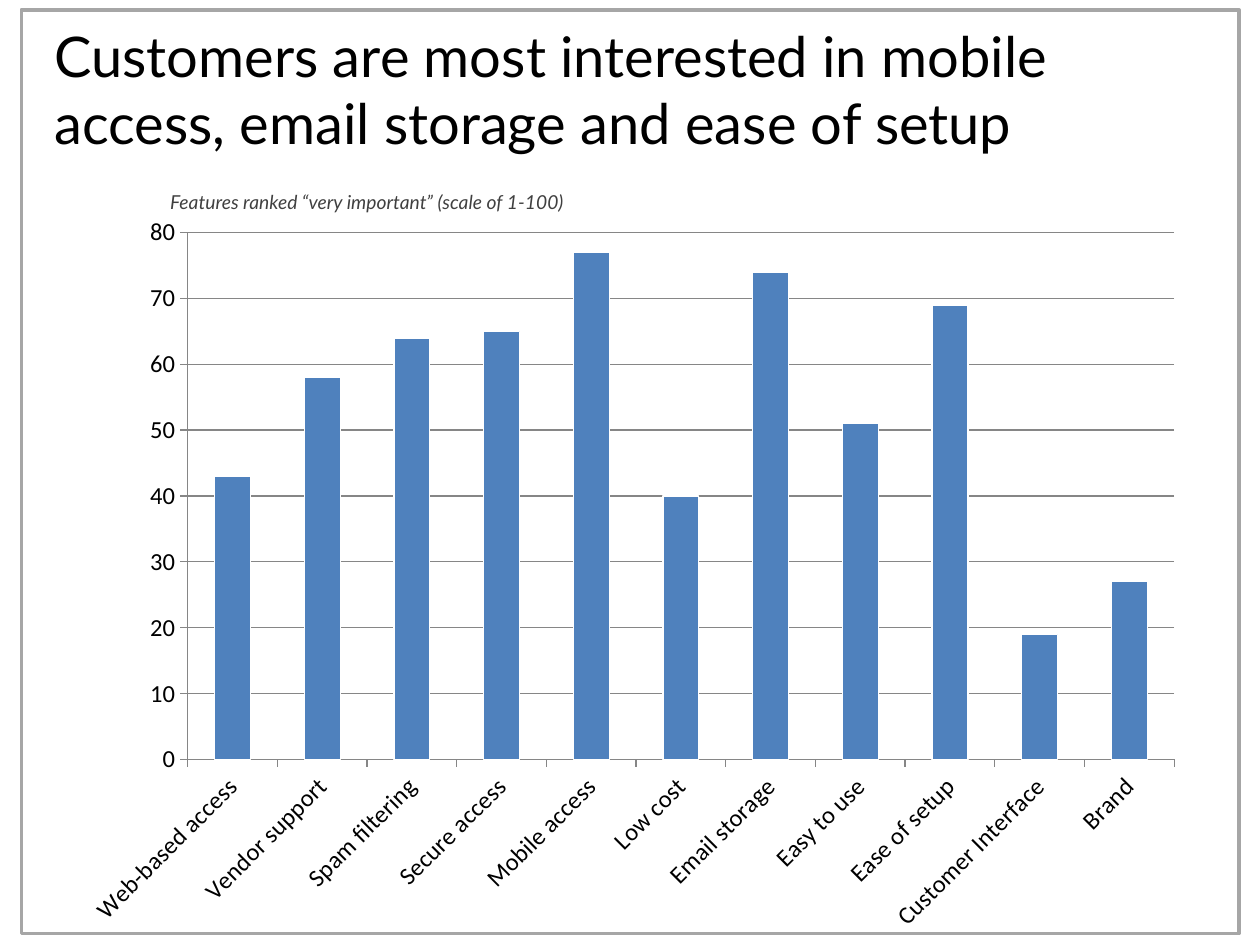
from pptx import Presentation
from pptx import util as u
from pptx.chart.data import CategoryChartData
from pptx.dml.color import RGBColor
from pptx.enum import chart as charts, shapes, text
from pptx.oxml import parse_xml
from pptx.oxml.ns import nsdecls

TITLE = "Customers are most interested in mobile access, email storage and ease of setup"
CAPTION = "Features ranked “very important” (scale of 1-100)"
SCORES = {
    "Web-based access": 43,
    "Vendor support": 58,
    "Spam filtering": 64,
    "Secure access": 65,
    "Mobile access": 77,
    "Low cost": 40,
    "Email storage": 74,
    "Easy to use": 51,
    "Ease of setup": 69,
    "Customer Interface": 19,
    "Brand": 27,
}
PLOT_AREA = {"x": 0.11, "y": 0.04, "w": 0.87, "h": 0.71}

BLACK = RGBColor(0x00, 0x00, 0x00)
WHITE = RGBColor(0xFF, 0xFF, 0xFF)
CAPTION_GREY = RGBColor(0x40, 0x40, 0x40)
FRAME_GREY = RGBColor(0xA6, 0xA6, 0xA6)
AXIS_GREY = RGBColor(0x86, 0x86, 0x86)
BAR_BLUE = RGBColor(0x4F, 0x81, 0xBD)


def cm_box(*lengths):
    return [u.Cm(length) for length in lengths]


def set_font(font, name, size, color, italic=False):
    font.name, font.size, font.italic = name, u.Pt(size), italic
    font.color.rgb = color


def set_line(line, color, width):
    line.color.rgb = color
    line.width = u.Pt(width)


def add_frame(slide):
    frame = slide.shapes.add_shape(
        shapes.MSO_SHAPE.RECTANGLE, *cm_box(0.43, 0.2, 24.55, 18.62))
    frame.shadow.inherit = False
    frame.fill.background()
    set_line(frame.line, FRAME_GREY, 2)
    slide.shapes.title.element.addprevious(frame.element)


def add_title(slide):
    title = slide.shapes.title
    title.left, title.top, title.width, title.height = cm_box(0.84, 0.2, 23.29, 3.18)
    frame = title.text_frame
    frame.text = TITLE
    frame.vertical_anchor = text.MSO_ANCHOR.MIDDLE
    paragraph = frame.paragraphs[0]
    paragraph.alignment = text.PP_ALIGN.LEFT
    set_font(paragraph.runs[0].font, "Lato", 32, BLACK)


def add_score_chart(slide):
    data = CategoryChartData(number_format="#,##0")
    data.categories = list(SCORES)
    data.add_series("Series 1", list(SCORES.values()))
    graphic = slide.shapes.add_chart(
        charts.XL_CHART_TYPE.COLUMN_CLUSTERED, *cm_box(1.27, 4.09, 22.86, 14.96), data)
    slide.shapes.title.element.addprevious(graphic.element)
    chart = graphic.chart
    chart.has_legend = False
    chart.has_title = False
    set_font(chart.font, "Calibri", 18, BLACK)

    plot = chart.plots[0]
    plot.gap_width = 150
    plot.vary_by_categories = False
    bars = plot.series[0].format
    bars.fill.solid()
    bars.fill.fore_color.rgb = BAR_BLUE
    set_line(bars.line, WHITE, 0.75)

    for axis in (chart.category_axis, chart.value_axis):
        set_font(axis.tick_labels.font, "Calibri", 14, BLACK)
        axis.major_tick_mark = charts.XL_TICK_MARK.OUTSIDE
        set_line(axis.format.line, AXIS_GREY, 0.75)
    values = chart.value_axis
    values.minimum_scale, values.maximum_scale, values.major_unit = 0, 80, 10
    values.has_major_gridlines = True
    set_line(values.major_gridlines.format.line, AXIS_GREY, 0.75)
    values.tick_labels.number_format = "#,##0"
    values.tick_labels.number_format_is_linked = False

    label_body = chart.category_axis._element.txPr.bodyPr
    label_body.set("rot", "-2700000")
    label_body.set("vert", "horz")
    set_plot_layout(chart)


def set_plot_layout(chart):
    plot_area = chart._chartSpace.chart.plotArea
    for layout in plot_area.xpath("c:layout"):
        plot_area.remove(layout)
    modes = '<c:xMode val="edge"/><c:yMode val="edge"/>'
    sizes = "".join(f'<c:{key} val="{value}"/>' for key, value in PLOT_AREA.items())
    plot_area.insert(0, parse_xml(
        f'<c:layout {nsdecls("c")}><c:manualLayout><c:layoutTarget val="inner"/>'
        f"{modes}{sizes}</c:manualLayout></c:layout>"))


def add_caption(slide):
    caption = slide.shapes.add_textbox(*cm_box(3.18, 3.71, 19.69, 0.74))
    frame = caption.text_frame
    frame.word_wrap = True
    frame.auto_size = text.MSO_AUTO_SIZE.SHAPE_TO_FIT_TEXT
    frame.text = CAPTION
    set_font(frame.paragraphs[0].runs[0].font, "Lato", 11, CAPTION_GREY, italic=True)


def main():
    presentation = Presentation()
    presentation.slide_width, presentation.slide_height = cm_box(25.4, 19.05)
    slide = presentation.slides.add_slide(presentation.slide_layouts[5])
    add_frame(slide)
    add_title(slide)
    add_score_chart(slide)
    add_caption(slide)
    presentation.save("out.pptx")


if __name__ == "__main__":
    main()
